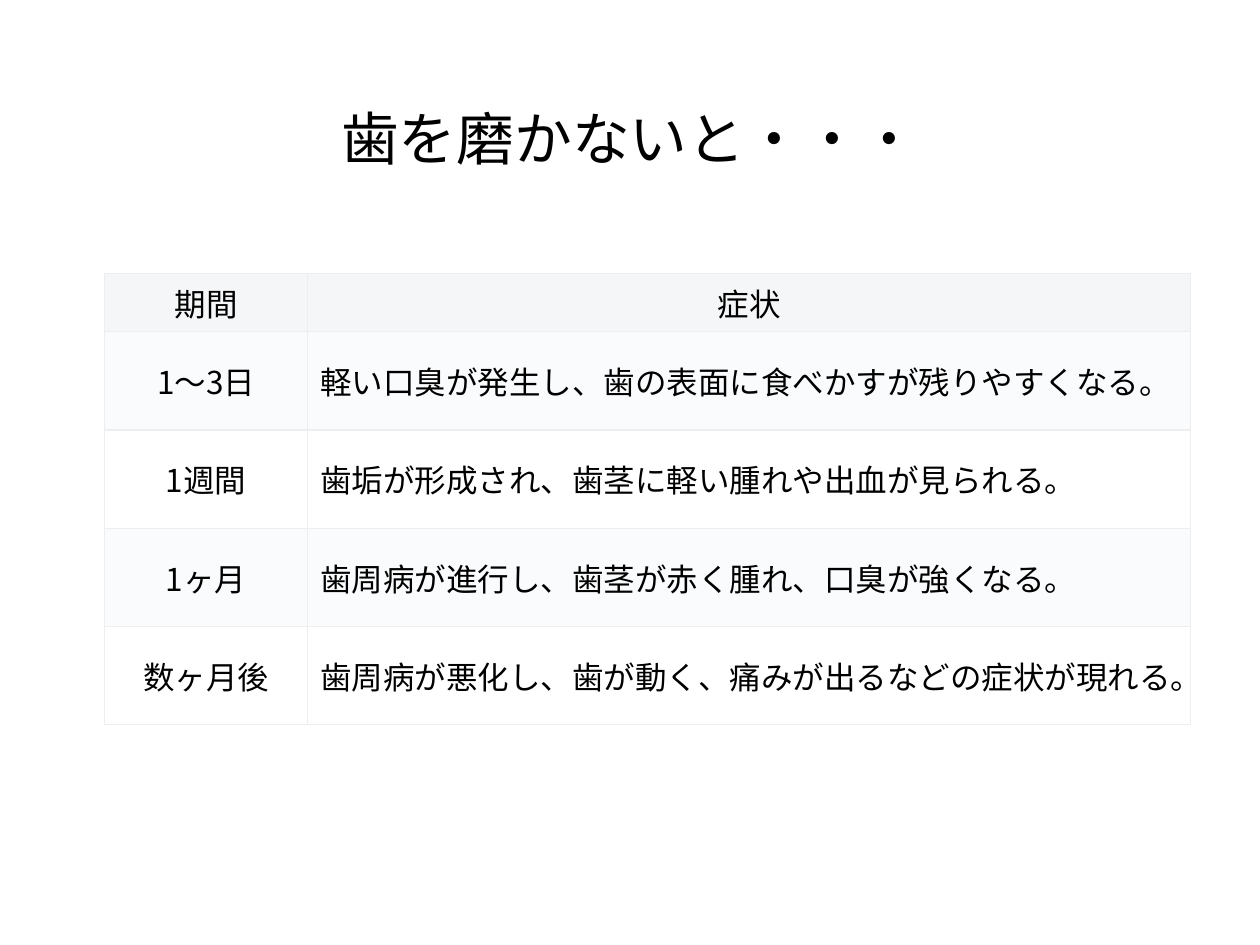
import pptx
import pptx.dml.color
import pptx.enum.text
import pptx.oxml
import pptx.oxml.ns
import pptx.util
from pptx.util import Inches

FONT = "Noto Sans CJK JP"
BLACK = pptx.dml.color.RGBColor(0x00, 0x00, 0x00)
HEADER_FILL = pptx.dml.color.RGBColor(0xF5, 0xF6, 0xF7)
BAND_FILL = pptx.dml.color.RGBColor(0xFA, 0xFB, 0xFC)
WHITE = pptx.dml.color.RGBColor(0xFF, 0xFF, 0xFF)
BORDER = pptx.dml.color.RGBColor(0xEE, 0xEE, 0xEE)
CENTER = pptx.enum.text.PP_ALIGN.CENTER
LEFT = pptx.enum.text.PP_ALIGN.LEFT
MIDDLE = pptx.enum.text.MSO_ANCHOR.MIDDLE

TITLE = "歯を磨かないと・・・"
SYMPTOMS = [
    ("期間", "症状"),
    ("1～3日", "軽い口臭が発生し、歯の表面に食べかすが残りやすくなる。"),
    ("1週間", "歯垢が形成され、歯茎に軽い腫れや出血が見られる。"),
    ("1ヶ月", "歯周病が進行し、歯茎が赤く腫れ、口臭が強くなる。"),
    ("数ヶ月後", "歯周病が悪化し、歯が動く、痛みが出るなどの症状が現れる。"),
]


def format_paragraph(paragraph, size, alignment):
    paragraph.alignment = alignment
    font = paragraph.font
    font.name = FONT
    font.size = pptx.util.Pt(size)
    font.color.rgb = BLACK
    properties = paragraph._p.pPr.find(pptx.oxml.ns.qn("a:defRPr"))
    latin = properties.find(pptx.oxml.ns.qn("a:latin"))
    latin.addnext(pptx.oxml.parse_xml(
        f'<a:ea {pptx.oxml.ns.nsdecls("a")} typeface="{FONT}"/>'))


def add_borders(cell):
    """Draw a thin line on all four sides, placed before the cell's fill."""
    properties = cell._tc.get_or_add_tcPr()
    for index, side in enumerate(("lnL", "lnR", "lnT", "lnB")):
        properties.insert(index, pptx.oxml.parse_xml(
            f'<a:{side} {pptx.oxml.ns.nsdecls("a")} w="{pptx.util.Pt(0.75)}">'
            f'<a:solidFill><a:srgbClr val="{BORDER}"/></a:solidFill></a:{side}>'))


def place_title(slide, left, top, width, height):
    title = slide.shapes.title
    title.left, title.top, title.width, title.height = left, top, width, height
    title.text_frame.text = TITLE
    title.text_frame.vertical_anchor = MIDDLE
    paragraph = title.text_frame.paragraphs[0]
    format_paragraph(paragraph, 33, CENTER)
    paragraph.line_spacing = 0.9


def place_symptom_table(slide, left, top, width, height):
    header_height = Inches(0.44)
    period_width = Inches(1.61)
    body_count = len(SYMPTOMS) - 1
    table = slide.shapes.add_table(
        len(SYMPTOMS), 2, left, top, width, height).table
    table.columns[0].width = period_width
    table.columns[1].width = width - period_width

    for row_index, texts in enumerate(SYMPTOMS):
        is_header = row_index == 0
        if is_header:
            row_height, fill = header_height, HEADER_FILL
        else:
            row_height = (height - header_height) // body_count
            fill = BAND_FILL if row_index % 2 else WHITE
        table.rows[row_index].height = row_height
        for column_index, text in enumerate(texts):
            cell = table.cell(row_index, column_index)
            cell.text = text
            cell.vertical_anchor = MIDDLE
            cell.fill.solid()
            cell.fill.fore_color.rgb = fill
            centered = is_header or column_index == 0
            format_paragraph(cell.text_frame.paragraphs[0], 18,
                             CENTER if centered else LEFT)
            add_borders(cell)


def main():
    presentation = pptx.Presentation()
    presentation.slide_width = Inches(10)
    presentation.slide_height = Inches(7.5)
    slide = presentation.slides.add_slide(presentation.slide_layouts[5])
    place_title(slide, Inches(0.69), Inches(0.4), Inches(8.62), Inches(1.45))
    place_symptom_table(
        slide, Inches(0.83), Inches(2.17), Inches(8.62), Inches(3.56))
    presentation.save("out.pptx")


if __name__ == "__main__":
    main()
